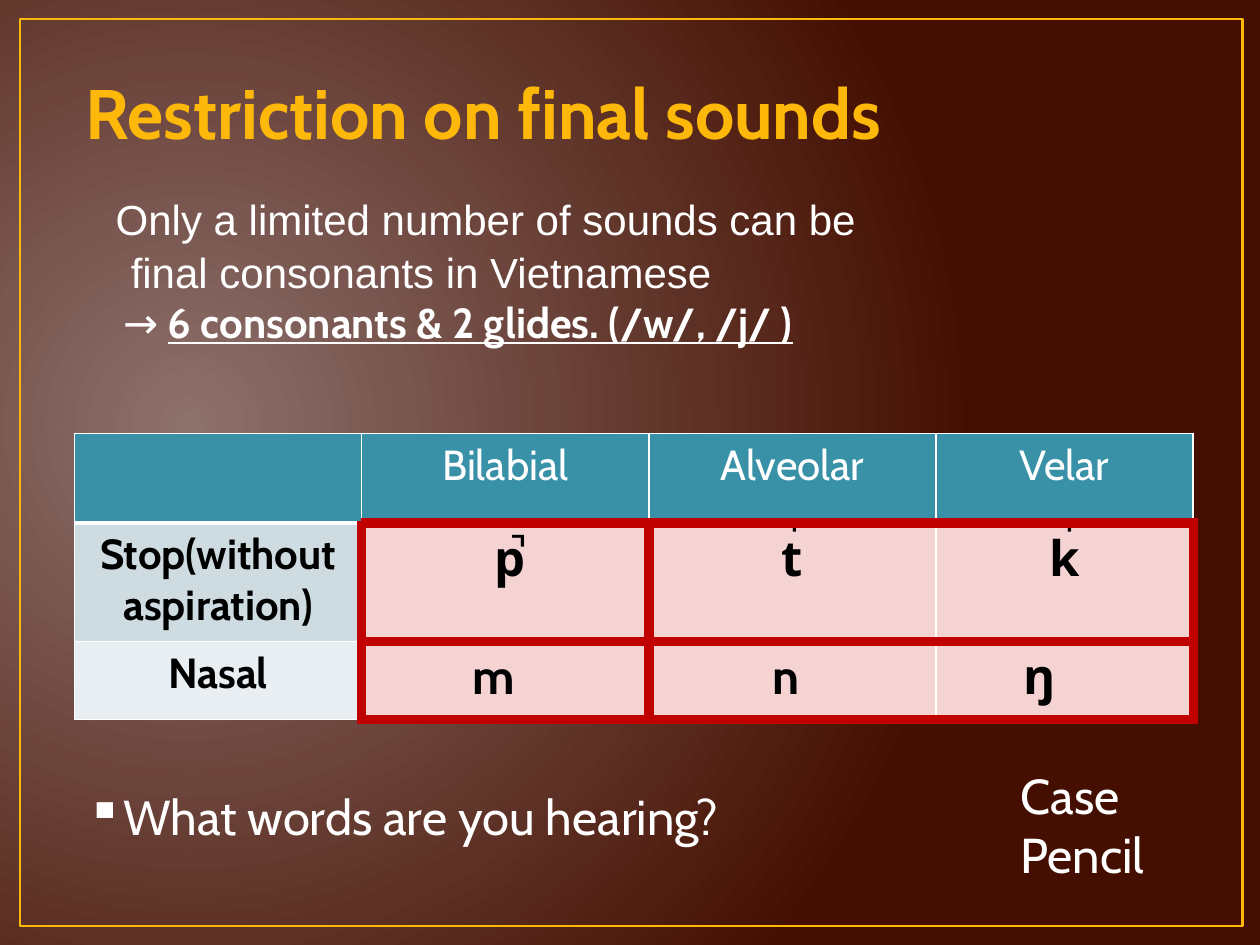
from lxml import etree
from pptx import Presentation
from pptx.dml.color import RGBColor as RGB
from pptx.enum.shapes import MSO_SHAPE as SHAPE
from pptx.enum.text import PP_ALIGN as ALIGN
from pptx.oxml.ns import qn
from pptx.util import Inches, Pt

C = {"gold": "FEB80A", "white": "FFFFFF", "black": "000000", "glow": "8D716D",
     "dark": "440F00", "teal": "3891A7", "band1": "CEDCE1", "band2": "E8EEF1",
     "pink": "F5D3D3", "red": "C00000", "outline": "E7DEC9"}
COLS = [2.28, 2.28, 2.28, 2.04]
ROWS = [0.71, 0.94, 0.62]
CELLS = [["", "Bilabial", "Alveolar", "Velar"],
         ["Stop(without\naspiration)", "p̚", "t̚", "k̚"],
         ["Nasal", "m", "n", "ŋ"]]
NUDGES = {(1, 1): 0.08, (2, 1): -0.19, (2, 2): -0.1, (2, 3): -0.4}


def style(r, size, color="white", bold=False, font="Cabin"):
    """Set the font of one run."""
    f = r.font
    f.size, f.bold, f.name = Pt(size), bold, font
    f.color.rgb = RGB.from_string(C[color])


def add_line(parent, tag, color, width, index):
    """Insert a solid line element with the given tag."""
    ln = etree.Element(qn(tag), w=str(Pt(width)))
    fill = etree.SubElement(ln, qn("a:solidFill"))
    etree.SubElement(fill, qn("a:srgbClr"), val=C[color])
    parent.insert(index, ln)


def add_text(s, x, y, w, h, text):
    """Add a wrapping text box and return its text frame."""
    tf = s.shapes.add_textbox(Inches(x), Inches(y), Inches(w), Inches(h)).text_frame
    tf.word_wrap = True
    tf.text = text
    return tf


def add_backdrop(s):
    """Fill the background with a radial glow and draw the gold frame."""
    fill = s.background.fill
    fill.gradient()
    for stop, name in zip(fill.gradient_stops, ("glow", "dark")):
        stop.color.rgb = RGB.from_string(C[name])
    grad = s.element.find(".//" + qn("a:gradFill"))
    for stop, pos in zip(fill.gradient_stops, (0, 1)):
        stop.position = pos
    lin = grad.find(qn("a:lin"))
    radial = etree.Element(qn("a:path"), path="circle")
    etree.SubElement(radial, qn("a:fillToRect"),
                     l="15000", t="50000", r="85000", b="60000")
    grad.replace(lin, radial)
    frame = s.shapes.add_shape(SHAPE.RECTANGLE, Inches(0.16), Inches(0.15),
                               Inches(9.7), Inches(7.2))
    frame.shadow.inherit = False
    frame.fill.background()
    frame.line.color.rgb = RGB.from_string(C["gold"])
    frame.line.width = Pt(1.5)


def add_statement(s, x, y, w, h):
    """Add the title and the three lines of the rule below it."""
    tf = add_text(s, x, y, w, h, "Restriction on final sounds\n"
                  "Only a limited number of sounds can be\n"
                  "final consonants in Vietnamese\n→ ")
    title, first, second, result = tf.paragraphs
    style(title.runs[0], 40, "gold", True)
    for p, indent, gap in ((first, 0.24, 23), (second, 0.36, 1.5), (result, 0.3, 0)):
        p._p.get_or_add_pPr().set("marL", str(Inches(indent)))
        p.space_before = Pt(gap)
    for p in (first, second):
        style(p.runs[0], 24, font="Arial")
    style(result.runs[0], 24)
    r = result.add_run()
    r.text = "6 consonants & 2 glides. (/w/, /j/ )"
    style(r, 24, bold=True)
    r.font.underline = True


def add_borders(cell, row, col):
    """Draw red edges around the groups of sounds and white ones elsewhere."""
    tcPr = cell._tc.get_or_add_tcPr()
    edges = [("a:lnL", row > 0 and col in (1, 2)),
             ("a:lnR", row > 0 and col in (0, 1, 3)),
             ("a:lnT", row > 0 and col > 0),
             ("a:lnB", col > 0)]
    for i, (tag, red) in enumerate(edges):
        plain = 3 if (row, col, tag) == (0, 0, "a:lnB") else 1
        add_line(tcPr, tag, "red" if red else "white", 6 if red else plain, i)


def add_sounds(s, x, y):
    """Add the table of final consonants."""
    table = s.shapes.add_table(len(ROWS), len(COLS), Inches(x), Inches(y),
                               Inches(sum(COLS)), Inches(sum(ROWS))).table
    for column, width in zip(table.columns, COLS):
        column.width = Inches(width)
    for i, height in enumerate(ROWS):
        table.rows[i].height = Inches(height)
        for j, text in enumerate(CELLS[i]):
            cell = table.cell(i, j)
            sound = i > 0 and j > 0
            fill = "pink" if sound else ("teal", "band1", "band2")[i]
            cell.fill.solid()
            cell.fill.fore_color.rgb = RGB.from_string(C[fill])
            add_borders(cell, i, j)
            nudge = NUDGES.get((i, j), 0)
            cell.margin_left = Inches(0.1 + max(nudge, 0))
            cell.margin_right = Inches(0.1 + max(-nudge, 0))
            cell.text_frame.text = text
            for p in cell.text_frame.paragraphs:
                p.alignment = ALIGN.CENTER
                for r in p.runs:
                    style(r, 28 if sound else 24, "black" if i else "white", i > 0)
                    if sound:
                        add_line(r._r.get_or_add_rPr(), "a:ln", "outline", 0.75, 0)


def add_question(s, x, y, w, h):
    """Add the bulleted question."""
    p = add_text(s, x, y, w, h, "What words are you hearing?").paragraphs[0]
    pPr = p._p.get_or_add_pPr()
    pPr.set("marL", str(Inches(0.23)))
    pPr.set("indent", str(Inches(-0.23)))
    etree.SubElement(pPr, qn("a:buChar"), char="▪")
    style(p.runs[0], 28)


def add_answers(s, x, y, w, h):
    """Add the list of example words."""
    for p in add_text(s, x, y, w, h, "Case\nPencil").paragraphs:
        style(p.runs[0], 28)


def main():
    """Build the slide and save it."""
    prs = Presentation()
    prs.slide_width, prs.slide_height = Inches(10), Inches(7.5)
    s = prs.slides.add_slide(prs.slide_layouts[6])
    add_backdrop(s)
    add_statement(s, 0.58, 0.5, 7.8, 6.36)
    add_sounds(s, 0.59, 3.44)
    add_question(s, 0.59, 6.19, 5.43, 0.57)
    add_answers(s, 8, 6.03, 1.47, 1.04)
    prs.save("out.pptx")


if __name__ == "__main__":
    main()
